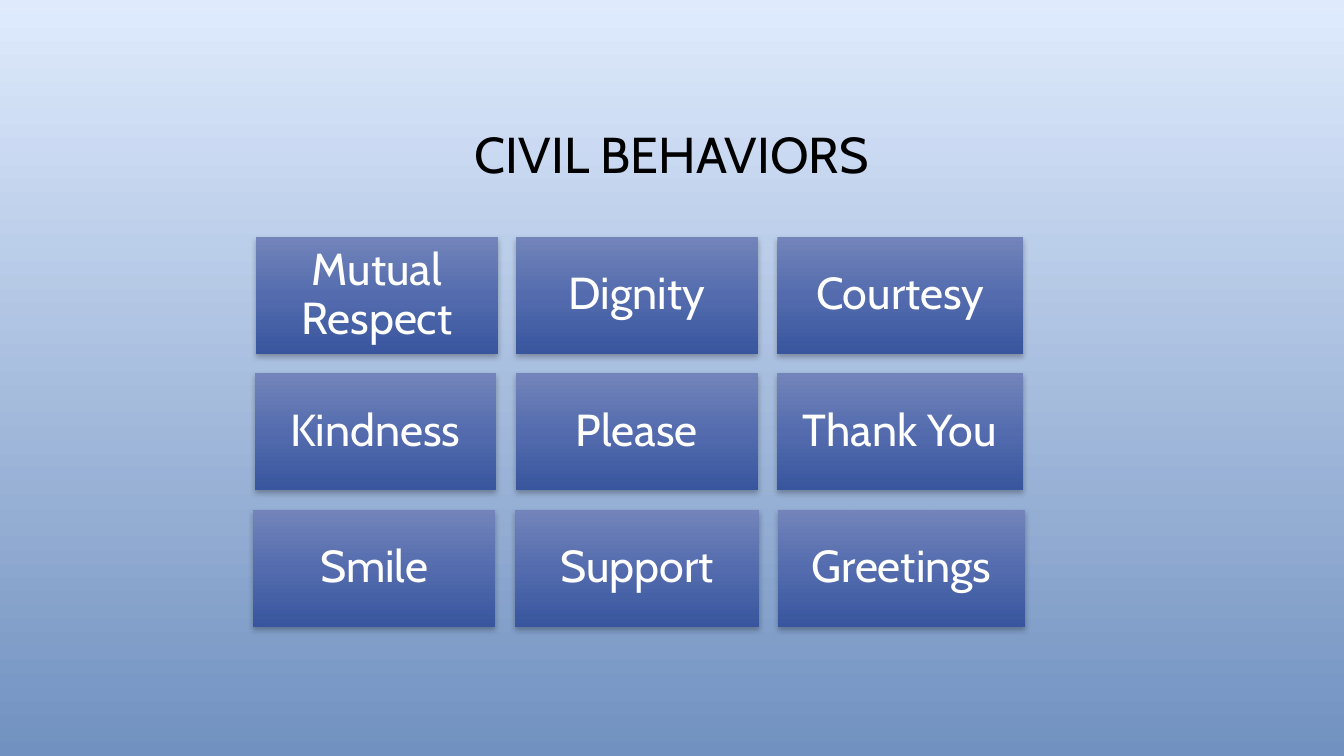
from copy import deepcopy

from pptx import Presentation
from pptx.dml.color import RGBColor
from pptx.enum.shapes import MSO_SHAPE
from pptx.enum.text import MSO_ANCHOR, PP_ALIGN
from pptx.oxml import parse_xml
from pptx.oxml.ns import nsdecls, qn
from pptx.util import Cm, Pt

RECT = MSO_SHAPE.RECTANGLE
MIDDLE = MSO_ANCHOR.MIDDLE
CENTER = PP_ALIGN.CENTER

TITLE = "CIVIL BEHAVIORS"
# Each row holds (label, left, width), lengths in cm
ROWS = [
    [("Mutual Respect", 6.45, 6.1), ("Dignity", 13, 6.1), ("Courtesy", 19.59, 6.2)],
    [("Kindness", 6.42, 6.08), ("Please", 13, 6.1), ("Thank You", 19.58, 6.2)],
    [("Smile", 6.38, 6.1), ("Support", 12.98, 6.15), ("Greetings", 19.61, 6.22)],
]
TOP, PITCH, HEIGHT, INSET = 5.97, 3.44, 2.95, 0.33


class Theme:
    font = "Cabin"
    title_size, tile_size = 36, 32
    title_ink, tile_ink = "000000", "FFFFFF"
    sky = [(0, "DFEBFD"), (1, "7191C0")]
    tile = [(0, "7284BA"), (0.5, "546CAE"), (1, "38559E")]
    shadow = "000000"


def paint(fill, holder, stops):
    """Fill with a gradient running down; holder is the XML around the fill."""
    fill.gradient()
    fill.gradient_angle = 270
    marks = next(holder.iter(qn("a:gsLst")))
    while len(marks) < len(stops):
        marks.append(deepcopy(marks[-1]))
    for stop, (place, color) in zip(fill.gradient_stops, stops):
        stop.position = place
        stop.color.rgb = RGBColor.from_string(color)


def write(frame, text, size, ink):
    frame.word_wrap = True
    frame.vertical_anchor = MIDDLE
    para = frame.paragraphs[0]
    para.alignment = CENTER
    para.line_spacing = 0.9
    run = para.add_run()
    run.text = text
    run.font.name = Theme.font
    run.font.size = Pt(size)
    run.font.color.rgb = RGBColor.from_string(ink)


def add_shadow(shape):
    shape._element.spPr.append(parse_xml(
        f'<a:effectLst {nsdecls("a")}>'
        f'<a:outerShdw blurRad="{Pt(4)}" dist="{Pt(2)}" dir="5400000" rotWithShape="0">'
        f'<a:srgbClr val="{Theme.shadow}"><a:alpha val="28000"/></a:srgbClr>'
        '</a:outerShdw></a:effectLst>'))


def add_tile(slide, text, left, top, width):
    tile = slide.shapes.add_shape(RECT, Cm(left), Cm(top), Cm(width), Cm(HEIGHT))
    paint(tile.fill, tile._element.spPr, Theme.tile)
    tile.line.fill.background()
    add_shadow(tile)
    frame = tile.text_frame
    frame.margin_left = frame.margin_right = Cm(INSET)
    frame.margin_top = frame.margin_bottom = Cm(INSET)
    write(frame, text, Theme.tile_size, Theme.tile_ink)


def main():
    deck = Presentation()
    deck.slide_width, deck.slide_height = Cm(33.87), Cm(19.05)
    slide = deck.slides.add_slide(deck.slide_layouts[5])
    paint(slide.background.fill, slide._element, Theme.sky)

    title = slide.shapes.title
    title.left, title.top = Cm(2.54), Cm(1.73)
    title.width, title.height = Cm(28.78), Cm(4.45)
    write(title.text_frame, TITLE, Theme.title_size, Theme.title_ink)

    for i, row in enumerate(ROWS):
        for text, left, width in row:
            add_tile(slide, text, left, TOP + i * PITCH, width)
    deck.save("out.pptx")


if __name__ == "__main__":
    main()
